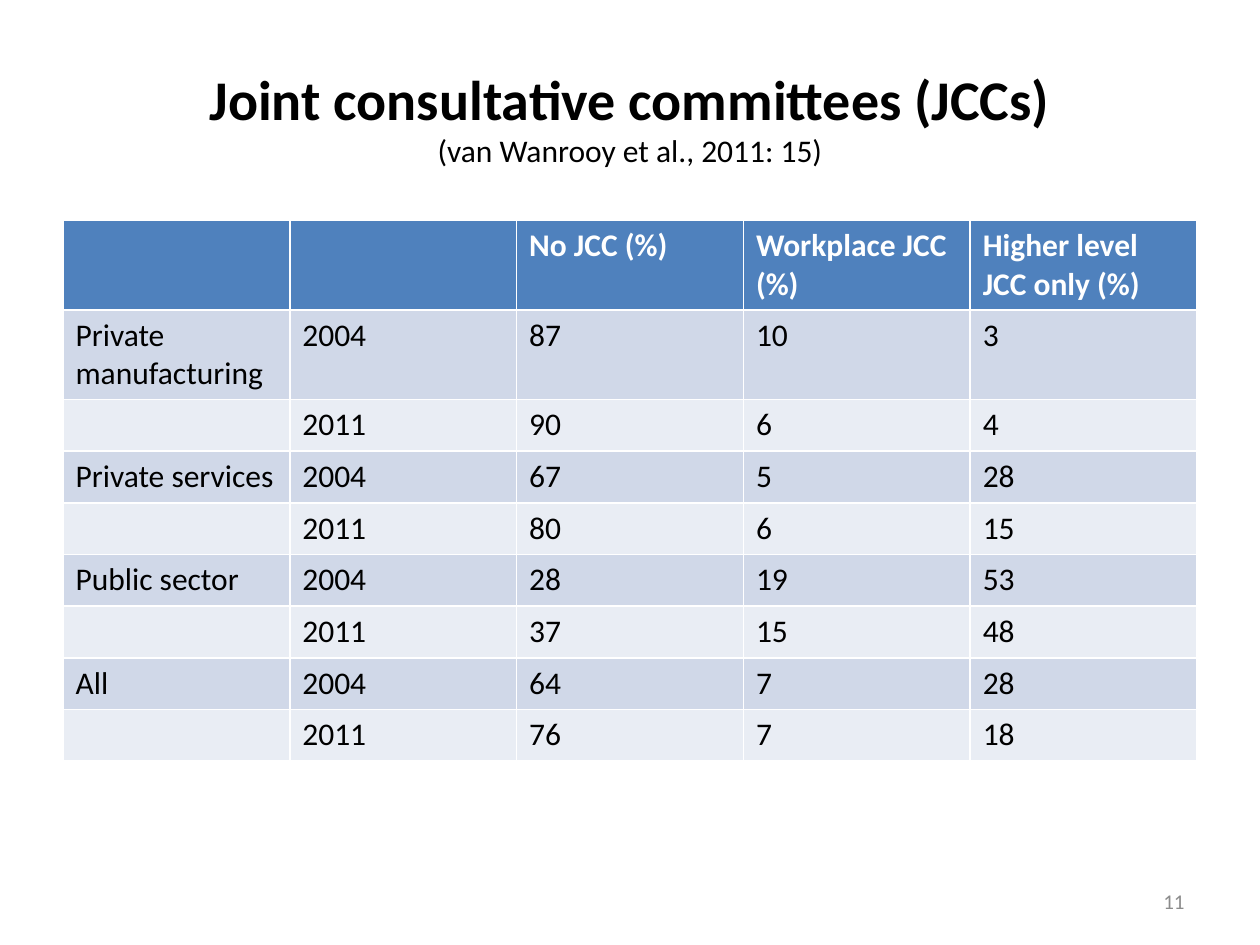
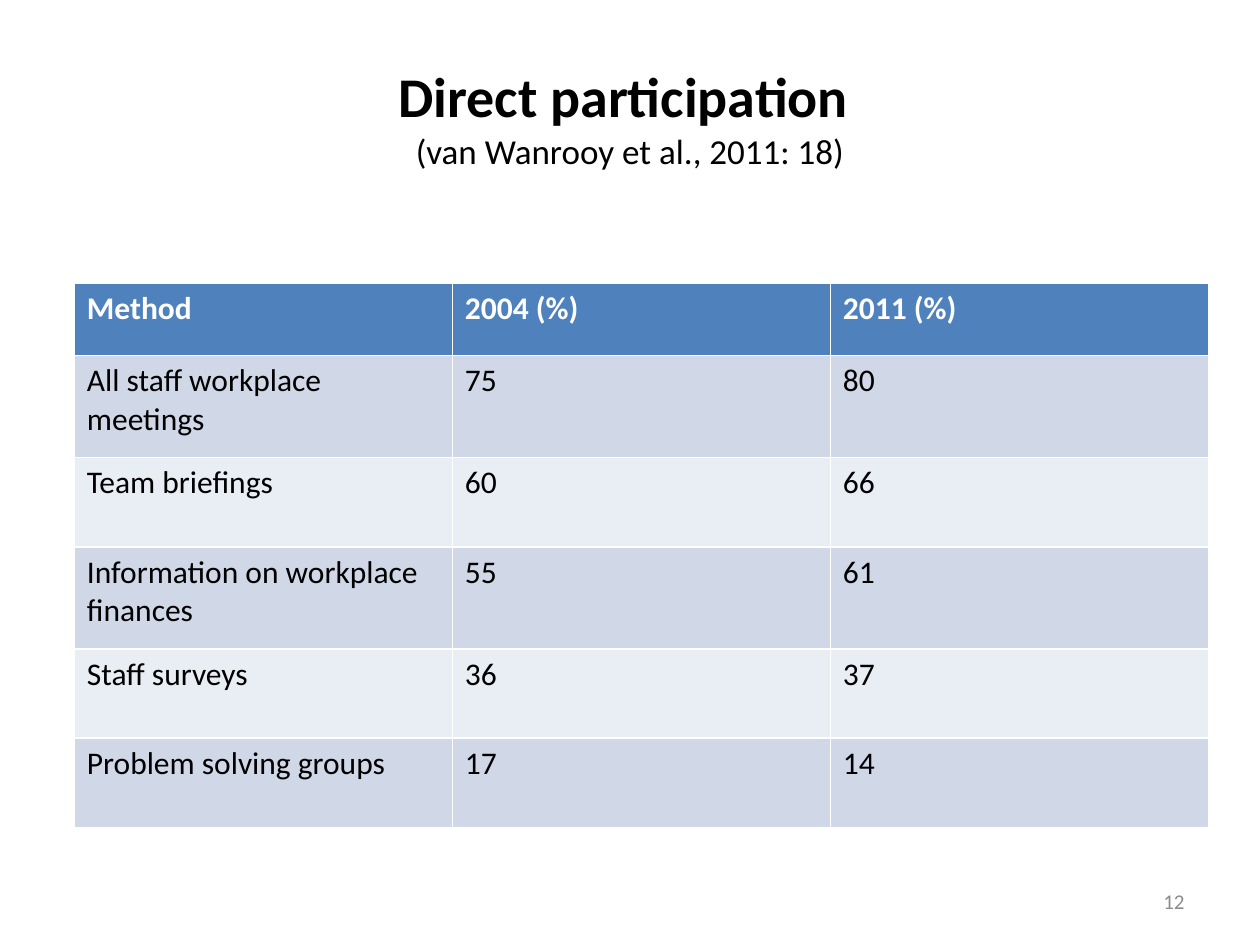
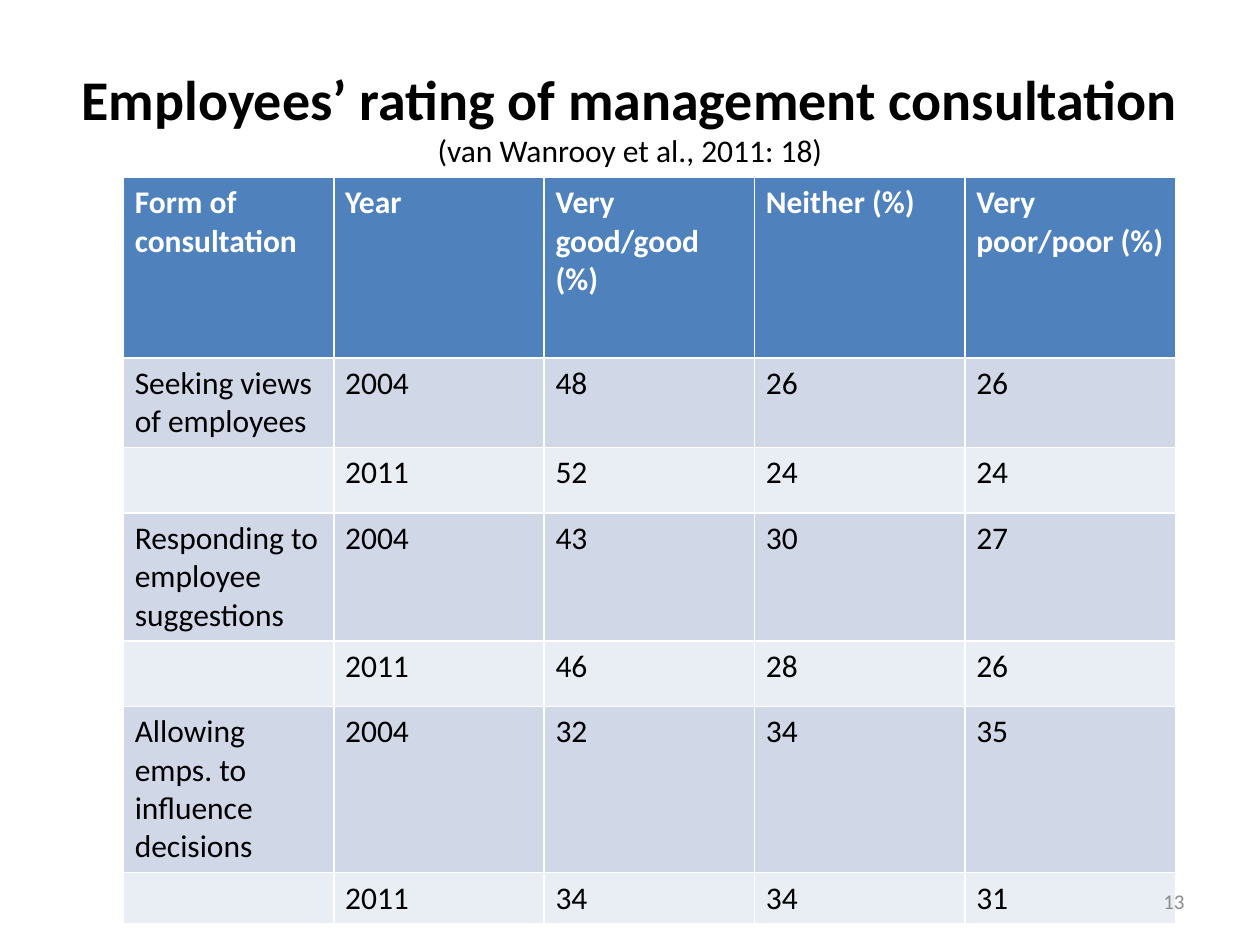
from lxml.etree import SubElement
from pptx import Presentation
from pptx.dml.color import RGBColor
from pptx.enum.text import MSO_ANCHOR, PP_ALIGN
from pptx.oxml.ns import qn
from pptx.util import Inches, Pt

FONT = "Calibri"
BLACK = RGBColor(0x00, 0x00, 0x00)
WHITE = RGBColor(0xFF, 0xFF, 0xFF)
GREY = RGBColor(0x8C, 0x8C, 0x8C)
HEADER_BLUE = RGBColor(0x4F, 0x81, 0xBD)
ODD_BAND = RGBColor(0xD0, 0xD8, 0xE8)
EVEN_BAND = RGBColor(0xE9, 0xED, 0xF4)
TITLE_SIZE = 32
TABLE_SIZE = 18
TITLE_ONLY_LAYOUT = 5

COMMITTEES = [
    ["", "", "No JCC (%)", "Workplace JCC (%)", "Higher level JCC only (%)"],
    ["Private manufacturing", "2004", "87", "10", "3"],
    ["", "2011", "90", "6", "4"],
    ["Private services", "2004", "67", "5", "28"],
    ["", "2011", "80", "6", "15"],
    ["Public sector", "2004", "28", "19", "53"],
    ["", "2011", "37", "15", "48"],
    ["All", "2004", "64", "7", "28"],
    ["", "2011", "76", "7", "18"],
]
PARTICIPATION = [
    ["Method", "2004 (%)", "2011 (%)"],
    ["All staff workplace meetings", "75", "80"],
    ["Team briefings", "60", "66"],
    ["Information on workplace finances", "55", "61"],
    ["Staff surveys", "36", "37"],
    ["Problem solving groups", "17", "14"],
]
RATINGS = [
    ["Form of consultation", "Year", "Very good/good (%)", "Neither (%)", "Very poor/poor (%)"],
    ["Seeking views of employees", "2004", "48", "26", "26"],
    ["", "2011", "52", "24", "24"],
    ["Responding to employee suggestions", "2004", "43", "30", "27"],
    ["", "2011", "46", "28", "26"],
    ["Allowing emps. to influence decisions", "2004", "32", "34", "35"],
    ["", "2011", "34", "34", "31"],
]


def add_run(paragraph, text, size, color, bold=False):
    run = paragraph.add_run()
    run.text = text
    run.font.name = FONT
    run.font.size = Pt(size)
    run.font.bold = bold
    run.font.color.rgb = color


def add_title(slide, heading, citation, citation_size):
    title = slide.shapes.title
    title.left, title.top = Inches(0.5), Inches(0.3)
    title.width, title.height = Inches(9), Inches(1.25)
    title.text_frame.vertical_anchor = MSO_ANCHOR.MIDDLE
    paragraph = title.text_frame.paragraphs[0]
    paragraph.alignment = PP_ALIGN.CENTER
    add_run(paragraph, heading, TITLE_SIZE, BLACK, bold=True)
    paragraph.add_line_break()
    line_break = paragraph._p.find(qn("a:br"))
    SubElement(line_break, qn("a:rPr"), sz=str(TITLE_SIZE * 100), b="1")
    add_run(paragraph, citation, citation_size, BLACK)


def row_style(row_index):
    if row_index == 0:
        return HEADER_BLUE, WHITE
    return (ODD_BAND if row_index % 2 else EVEN_BAND), BLACK


def add_banded_table(slide, rows, left, top, column_width, row_heights, side_margin=0.1):
    column_count = len(rows[0])
    frame = slide.shapes.add_table(
        len(rows), column_count, Inches(left), Inches(top),
        Inches(column_width * column_count), Inches(sum(row_heights)),
    )
    table = frame.table
    for column in table.columns:
        column.width = Inches(column_width)
    for row_index, (values, height) in enumerate(zip(rows, row_heights)):
        table.rows[row_index].height = Inches(height)
        fill_color, text_color = row_style(row_index)
        for column_index, value in enumerate(values):
            cell = table.cell(row_index, column_index)
            cell.margin_left = cell.margin_right = Inches(side_margin)
            cell.fill.solid()
            cell.fill.fore_color.rgb = fill_color
            if value:
                paragraph = cell.text_frame.paragraphs[0]
                add_run(paragraph, value, TABLE_SIZE, text_color, bold=row_index == 0)


def add_slide_number(slide, number):
    box = slide.shapes.add_textbox(Inches(7.17), Inches(6.95), Inches(2.33), Inches(0.4))
    box.text_frame.word_wrap = True
    box.text_frame.vertical_anchor = MSO_ANCHOR.MIDDLE
    paragraph = box.text_frame.paragraphs[0]
    paragraph.alignment = PP_ALIGN.RIGHT
    add_run(paragraph, str(number), 12, GREY)


def add_content_slide(presentation, number, heading, citation, citation_size):
    slide = presentation.slides.add_slide(presentation.slide_layouts[TITLE_ONLY_LAYOUT])
    add_title(slide, heading, citation, citation_size)
    return slide


def main():
    presentation = Presentation()
    presentation.slide_width = Inches(10)
    presentation.slide_height = Inches(7.5)

    slide = add_content_slide(presentation, 11, "Joint consultative committees (JCCs)",
                              "(van Wanrooy et al., 2011: 15)", 18)
    add_banded_table(slide, COMMITTEES, 0.5, 1.75, 1.8, [0.41] * len(COMMITTEES))
    add_slide_number(slide, 11)

    slide = add_content_slide(presentation, 12, "Direct participation ",
                              "(van Wanrooy et al., 2011: 18)", 20)
    add_banded_table(slide, PARTICIPATION, 0.59, 2.25, 3, [0.57, 0.81, 0.71, 0.81, 0.71, 0.71])
    add_slide_number(slide, 12)

    slide = add_content_slide(presentation, 13, "Employees’ rating of management consultation",
                              "(van Wanrooy et al., 2011: 18)", 18)
    add_banded_table(slide, RATINGS, 0.98, 1.41, 1.67,
                     [1.43, 0.71, 0.52, 1, 0.52, 0.71, 0.32], side_margin=0.09)
    add_slide_number(slide, 13)

    presentation.save("out.pptx")


if __name__ == "__main__":
    main()
